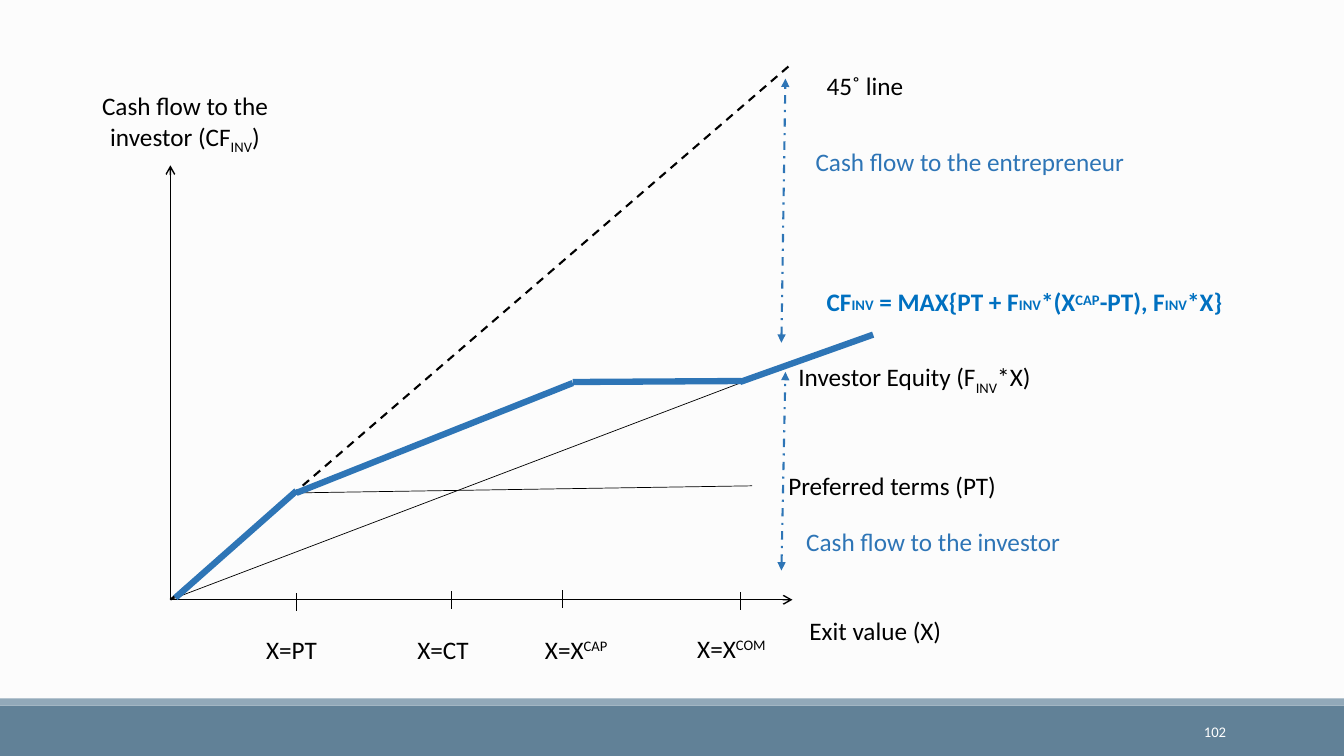
from lxml import etree
from pptx import Presentation
from pptx.dml.color import RGBColor
from pptx.enum.dml import MSO_LINE
from pptx.enum.shapes import MSO_CONNECTOR, MSO_SHAPE
from pptx.enum.text import MSO_ANCHOR, PP_ALIGN
from pptx.oxml.ns import qn
from pptx.util import Inches, Pt

DASH, DASH_DOT = MSO_LINE.DASH, MSO_LINE.DASH_DOT
LEFT, CENTER, RIGHT = PP_ALIGN.LEFT, PP_ALIGN.CENTER, PP_ALIGN.RIGHT
TOP, MIDDLE = MSO_ANCHOR.TOP, MSO_ANCHOR.MIDDLE
STRAIGHT, RECTANGLE = MSO_CONNECTOR.STRAIGHT, MSO_SHAPE.RECTANGLE
BLACK, BLUE, BRIGHT_BLUE, WHITE = "000000", "2E75B6", "0070C0", "FFFFFF"
color = RGBColor.from_string


def add_line(start, end, hue=BLACK, width=0.5, dash=None, heads=()):
    line = page.shapes.add_connector(STRAIGHT, *map(Inches, start + end))
    formats = {"width": Pt(width), "dash_style": dash}
    for name, value in formats.items():
        setattr(line.line, name, value)
    line.line.color.rgb = color(hue)
    properties = line.line._get_or_add_ln()
    for tag, kind in heads:
        etree.SubElement(properties, qn(tag), type=kind)
    etree.SubElement(line._element.spPr, qn("a:effectLst"))


def add_text(frame, spans, hue=BLACK, align=LEFT, size=18, bold=False, anchor=TOP):
    box = page.shapes.add_textbox(*map(Inches, frame))
    box.text_frame.word_wrap = True
    box.text_frame.vertical_anchor = anchor
    para = box.text_frame.paragraphs[0]
    para.alignment = align
    formats = {"name": "Calibri", "size": Pt(size), "bold": bold}
    for text, baseline in spans:
        span = para.add_run()
        span.text = text
        for name, value in formats.items():
            setattr(span.font, name, value)
        span.font.color.rgb = color(hue)
        if baseline:
            span.font._element.set("baseline", str(baseline * 1000))


deck = Presentation()
deck.slide_width, deck.slide_height = Inches(13.33), Inches(7.5)
page = deck.slides.add_slide(deck.slide_layouts[6])
page.background.fill.solid()
page.background.fill.fore_color.rgb = color("FCFCFC")

for top, height, hue in [(7, 0.5, "618197"), (6.93, 0.07, "92A9B9")]:
    band = page.shapes.add_shape(RECTANGLE, 0, Inches(top), deck.slide_width, Inches(height))
    band.shadow.inherit = False
    band.fill.solid()
    band.fill.fore_color.rgb = color(hue)
    band.line.fill.background()

origin = (1.69, 5.95)
for axis_end in [(1.69, 1.64), (7.86, 5.95)]:
    add_line(axis_end, origin, width=1, heads=[("a:headEnd", "arrow")])
add_line((7.82, 0.66), origin, width=1.5, dash=DASH)
add_line((7.46, 4.82), (2.94, 4.89))
add_line((8.63, 3.31), origin)

for x, middle in [(2.94, 5.97), (4.48, 5.95), (5.58, 5.94), (7.34, 5.96)]:
    add_line((x, middle + 0.09), (x, middle - 0.09))

both_heads = [("a:headEnd", "triangle"), ("a:tailEnd", "triangle")]
for bottom, top in [(5.66, 3.69), (3.4, 0.78)]:
    add_line((7.75, bottom), (7.79, top), BLUE, 1.5, DASH_DOT, both_heads)

payoff = [
    ((5.68, 3.8), (2.94, 4.89)),
    ((1.74, 5.93), (2.94, 4.87)),
    ((7.35, 3.78), (5.68, 3.79)),
    ((8.66, 3.32), (7.34, 3.79)),
]
for start, end in payoff:
    add_line(start, end, BLUE, 4.5)

add_text((7.72, 4.62, 2.3, 0.4), [("Preferred terms (PT)", 0)])
add_text((7.82, 3.54, 3.28, 0.4), [("Investor Equity (F", 0), ("INV", -25), ("*X)", 0)])
add_text((8.1, 0.65, 3.28, 0.4), [("45˚ line", 0)])
add_text((7.93, 6.06, 2.2, 0.4), [("Exit value (X)", 0)])
add_text((0.54, 0.85, 2.59, 0.71),
         [("Cash flow to the investor (CF", 0), ("INV", -25), (")", 0)], align=CENTER)

add_text((2.54, 6.24, 0.81, 0.4), [("X=PT", 0)])
add_text((4.04, 6.24, 1.19, 0.4), [("X=CT", 0)])
for left, top, exponent in [(5.24, 6.24, "CAP"), (6.78, 6.23, "COM")]:
    add_text((left, top, 0.95, 0.4), [("X=X", 0), (exponent, 30)], align=CENTER)

add_text((7.91, 1.4, 3.42, 0.4), [("Cash flow to the entrepreneur", 0)], BLUE, CENTER)
add_text((7.85, 5.17, 2.81, 0.4), [("Cash flow to the investor", 0)], BLUE, CENTER)

formula = [
    ("CF", 0), ("INV", 3), (" = MAX{PT + F", 0), ("INV", 3), ("*(X", 0),
    ("CAP", 24), ("-PT), F", 0), ("INV", 3), ("*X}", 0),
]
add_text((8.1, 2.79, 4.61, 0.4), formula, BRIGHT_BLUE, bold=True)
add_text((10.83, 7.06, 1.43, 0.4), [("102", 0)], WHITE, RIGHT, 10.5, anchor=MIDDLE)

deck.save("out.pptx")
